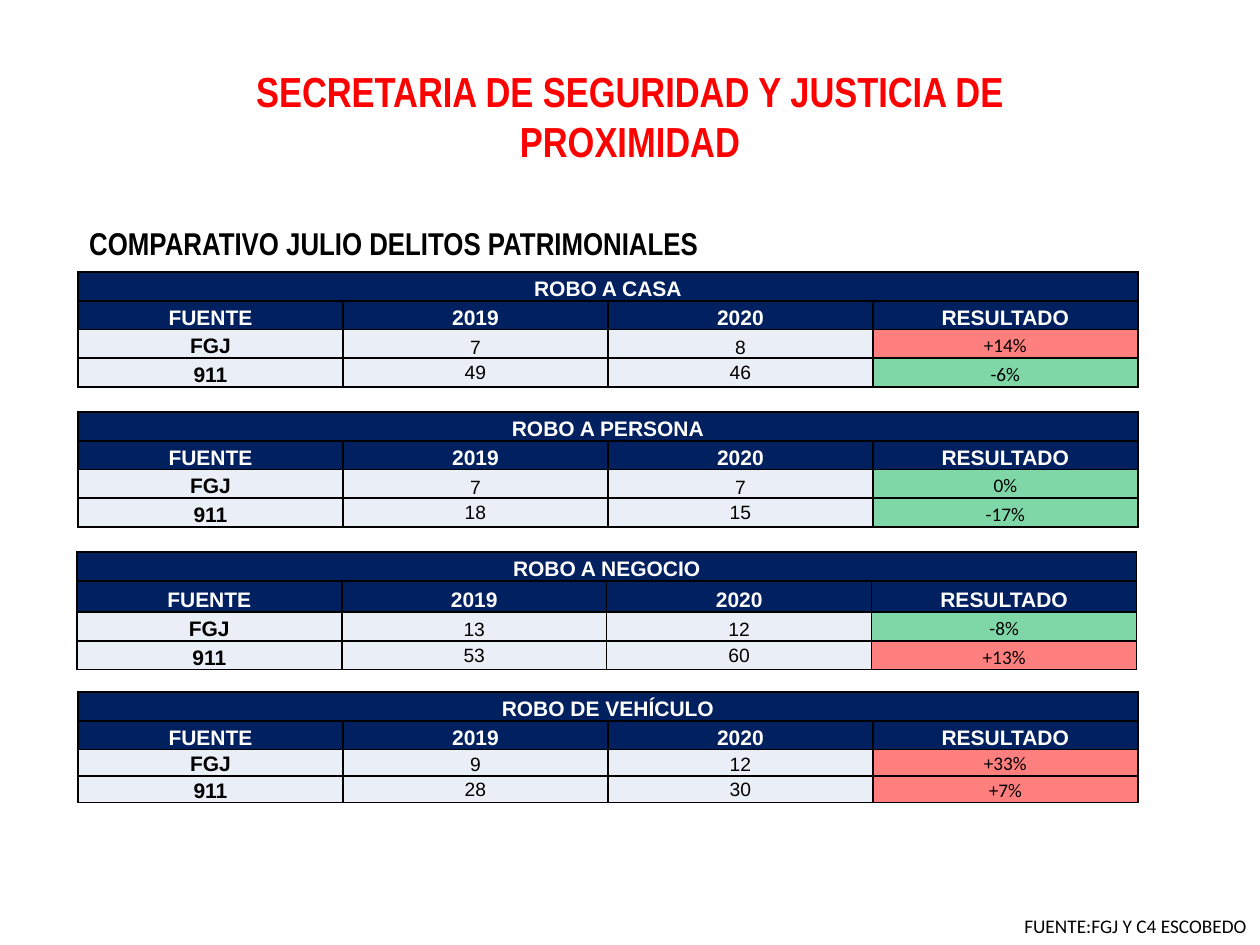
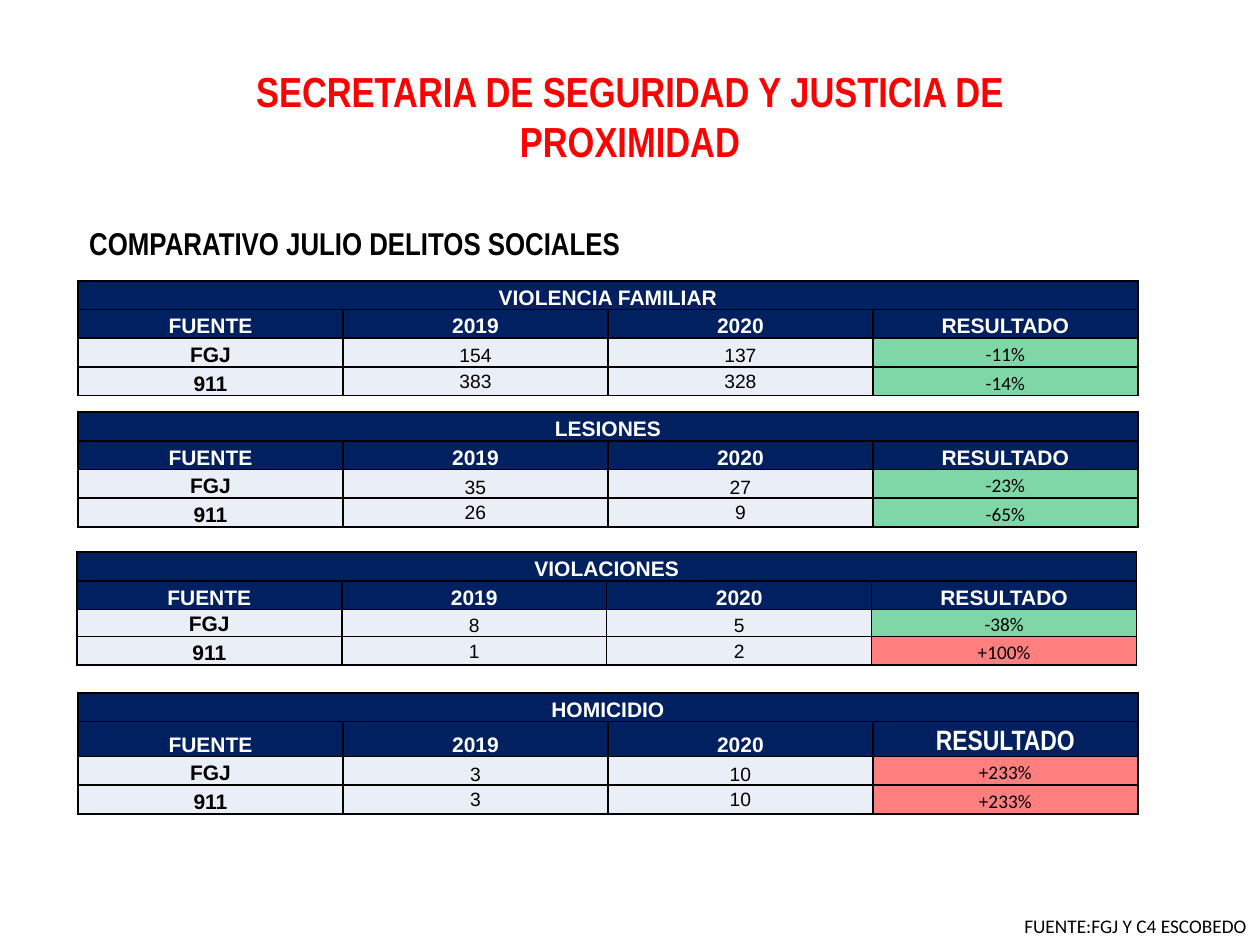
from dataclasses import dataclass
from typing import Any

from lxml import etree
from pptx import Presentation
from pptx.dml.color import RGBColor
from pptx.enum.text import MSO_ANCHOR, MSO_AUTO_SIZE, PP_ALIGN
from pptx.oxml.ns import qn
from pptx.util import Pt

LEFT, CENTER = PP_ALIGN.LEFT, PP_ALIGN.CENTER
MIDDLE, BOTTOM = MSO_ANCHOR.MIDDLE, MSO_ANCHOR.BOTTOM
FIT_SHAPE = MSO_AUTO_SIZE.SHAPE_TO_FIT_TEXT

COLORS = {
    "title": "FF0000",
    "text": "000000",
    "header_text": "FFFFFF",
    "header": "002060",
    "body": "EAEFF7",
    "rise": "FF0000",
    "fall": "00B050",
    "border": "000000",
}

TITLE = "SECRETARIA DE SEGURIDAD Y JUSTICIA DE PROXIMIDAD"
SOURCE_NOTE = "FUENTE:FGJ Y C4 ESCOBEDO"
HEADINGS = ("FUENTE", "2019", "2020", "RESULTADO")

TABLE_LEFT = 44.6
FIRST_TABLE_TOP = 155.5
TABLE_PITCH = 80
COLUMN_WIDTH = 151.4
ROW = 16.4
CELL_INSET = 0.72
RESULT_ALPHA = 50


@dataclass(frozen=True)
class TextStyle:
    font: str
    size: float
    color: str
    bold: bool = False
    align: Any = CENTER


TITLE_STYLE = TextStyle("Arial Narrow", 24, "title", True)
SUBTITLE_STYLE = TextStyle("Arial Narrow", 18, "text", True, LEFT)
NOTE_STYLE = TextStyle("Calibri", 11, "text", align=LEFT)
HEADER_STYLE = TextStyle("Arial", 12, "header_text", True)
LARGE_HEADER_STYLE = TextStyle("Arial Narrow", 16, "header_text", True)
SOURCE_STYLE = TextStyle("Arial", 12, "text", True)
VALUE_STYLE = TextStyle("Arial", 11, "text")
RESULT_STYLE = TextStyle("Calibri", 11, "text")


@dataclass(frozen=True)
class CrimeTable:
    name: str
    fgj: tuple[str, str, str]
    calls: tuple[str, str, str]
    row_heights: tuple[float, ...] = (ROW,) * 4
    shift_x: float = 0
    shift_y: float = 0
    result_heading: TextStyle = HEADER_STYLE


@dataclass(frozen=True)
class Comparison:
    subtitle: str
    tables: tuple[CrimeTable, ...]


COMPARISONS = (
    Comparison("COMPARATIVO JULIO DELITOS PATRIMONIALES", (
        CrimeTable("ROBO A CASA", ("7", "8", "+14%"), ("49", "46", "-6%")),
        CrimeTable("ROBO A PERSONA", ("7", "7", "0%"), ("18", "15", "-17%")),
        CrimeTable("ROBO A NEGOCIO", ("13", "12", "-8%"), ("53", "60", "+13%"),
                   row_heights=(ROW, 17.9, ROW, ROW), shift_x=-0.7),
        CrimeTable("ROBO DE VEHÍCULO", ("9", "12", "+33%"), ("28", "30", "+7%"),
                   row_heights=(ROW, ROW, 15.1, 15.1)),
    )),
    Comparison("COMPARATIVO JULIO DELITOS SOCIALES", (
        CrimeTable("VIOLENCIA FAMILIAR", ("154", "137", "-11%"),
                   ("383", "328", "-14%"), shift_y=5),
        CrimeTable("LESIONES", ("35", "27", "-23%"), ("26", "9", "-65%")),
        CrimeTable("VIOLACIONES", ("8", "5", "-38%"), ("1", "2", "+100%"),
                   row_heights=(ROW, ROW, 15.4, ROW), shift_x=-0.7),
        CrimeTable("HOMICIDIO", ("3", "10", "+233%"), ("3", "10", "+233%"),
                   row_heights=(ROW, 19.8, ROW, ROW), shift_y=0.5,
                   result_heading=LARGE_HEADER_STYLE),
    )),
)


def rgb(color: str) -> RGBColor:
    return RGBColor.from_string(COLORS[color])


def write(frame: Any, text: str, style: TextStyle) -> None:
    frame.text = text
    para = frame.paragraphs[0]
    para.alignment = style.align
    for span in para.runs:
        span.font.name = style.font
        span.font.size = Pt(style.size)
        span.font.bold = style.bold
        span.font.color.rgb = rgb(style.color)


def add_text(page: Any, left: float, top: float, width: float, height: float,
             text: str, style: TextStyle, wrap: bool = True) -> None:
    box = page.shapes.add_textbox(Pt(left), Pt(top), Pt(width), Pt(height))
    box.text_frame.word_wrap = wrap
    box.text_frame.auto_size = FIT_SHAPE
    write(box.text_frame, text, style)


def add_borders(cell: Any) -> None:
    properties = cell._tc.get_or_add_tcPr()
    for side in ("a:lnL", "a:lnR", "a:lnT", "a:lnB"):
        line = etree.SubElement(properties, qn(side), w=str(Pt(1)))
        fill = etree.SubElement(line, qn("a:solidFill"))
        etree.SubElement(fill, qn("a:srgbClr"), val=COLORS["border"])


def paint_cell(cell: Any, color: str, alpha: int = 100) -> None:
    """Border and fill a cell; alpha is its opacity in percent."""
    add_borders(cell)
    cell.fill.solid()
    cell.fill.fore_color.rgb = rgb(color)
    if alpha < 100:
        tint = cell._tc.tcPr.find(qn("a:solidFill")).find(qn("a:srgbClr"))
        etree.SubElement(tint, qn("a:alpha"), val=str(alpha * 1000))


def fill_cell(cell: Any, text: str, style: TextStyle, anchor: Any = BOTTOM) -> None:
    cell.margin_left = cell.margin_right = cell.margin_top = Pt(CELL_INSET)
    cell.margin_bottom = 0
    cell.vertical_anchor = anchor
    write(cell.text_frame, text, style)


def add_crime_table(page: Any, crime: CrimeTable, index: int) -> None:
    top = FIRST_TABLE_TOP + index * TABLE_PITCH + crime.shift_y
    table = page.shapes.add_table(
        4, 4, Pt(TABLE_LEFT + crime.shift_x), Pt(top),
        Pt(4 * COLUMN_WIDTH), Pt(sum(crime.row_heights))).table
    table.first_row = table.horz_banding = False
    for column in table.columns:
        column.width = Pt(COLUMN_WIDTH)
    for row, height in zip(table.rows, crime.row_heights):
        row.height = Pt(height)

    for column in range(4):
        paint_cell(table.cell(0, column), "header")
    table.cell(0, 0).merge(table.cell(0, 3))
    fill_cell(table.cell(0, 0), crime.name, HEADER_STYLE)

    heading_styles = (HEADER_STYLE,) * 3 + (crime.result_heading,)
    for column, (heading, style) in enumerate(zip(HEADINGS, heading_styles)):
        paint_cell(table.cell(1, column), "header")
        fill_cell(table.cell(1, column), heading, style)

    body = (("FGJ", crime.fgj, BOTTOM), ("911", crime.calls, MIDDLE))
    for row, (source, (before, after, result), anchor) in enumerate(body, start=2):
        for column in range(3):
            paint_cell(table.cell(row, column), "body")
        fill_cell(table.cell(row, 0), source, SOURCE_STYLE)
        fill_cell(table.cell(row, 1), before, VALUE_STYLE, anchor)
        fill_cell(table.cell(row, 2), after, VALUE_STYLE, anchor)
        trend = "rise" if result.startswith("+") else "fall"
        paint_cell(table.cell(row, 3), trend, RESULT_ALPHA)
        fill_cell(table.cell(row, 3), result, RESULT_STYLE)


def add_comparison(deck: Any, comparison: Comparison) -> None:
    page = deck.slides.add_slide(deck.slide_layouts[6])
    add_text(page, 136.8, 33.8, 446.4, 65.4, TITLE, TITLE_STYLE)
    add_text(page, 43.9, 124.6, 531.4, 29, comparison.subtitle, SUBTITLE_STYLE)
    for index, crime in enumerate(comparison.tables):
        add_crime_table(page, crime, index)
    add_text(page, 578.2, 519.1, 142.5, 20.9, SOURCE_NOTE, NOTE_STYLE, wrap=False)


def main() -> None:
    deck = Presentation()
    deck.slide_width, deck.slide_height = Pt(720), Pt(540)
    for comparison in COMPARISONS:
        add_comparison(deck, comparison)
    deck.save("out.pptx")


if __name__ == "__main__":
    main()
